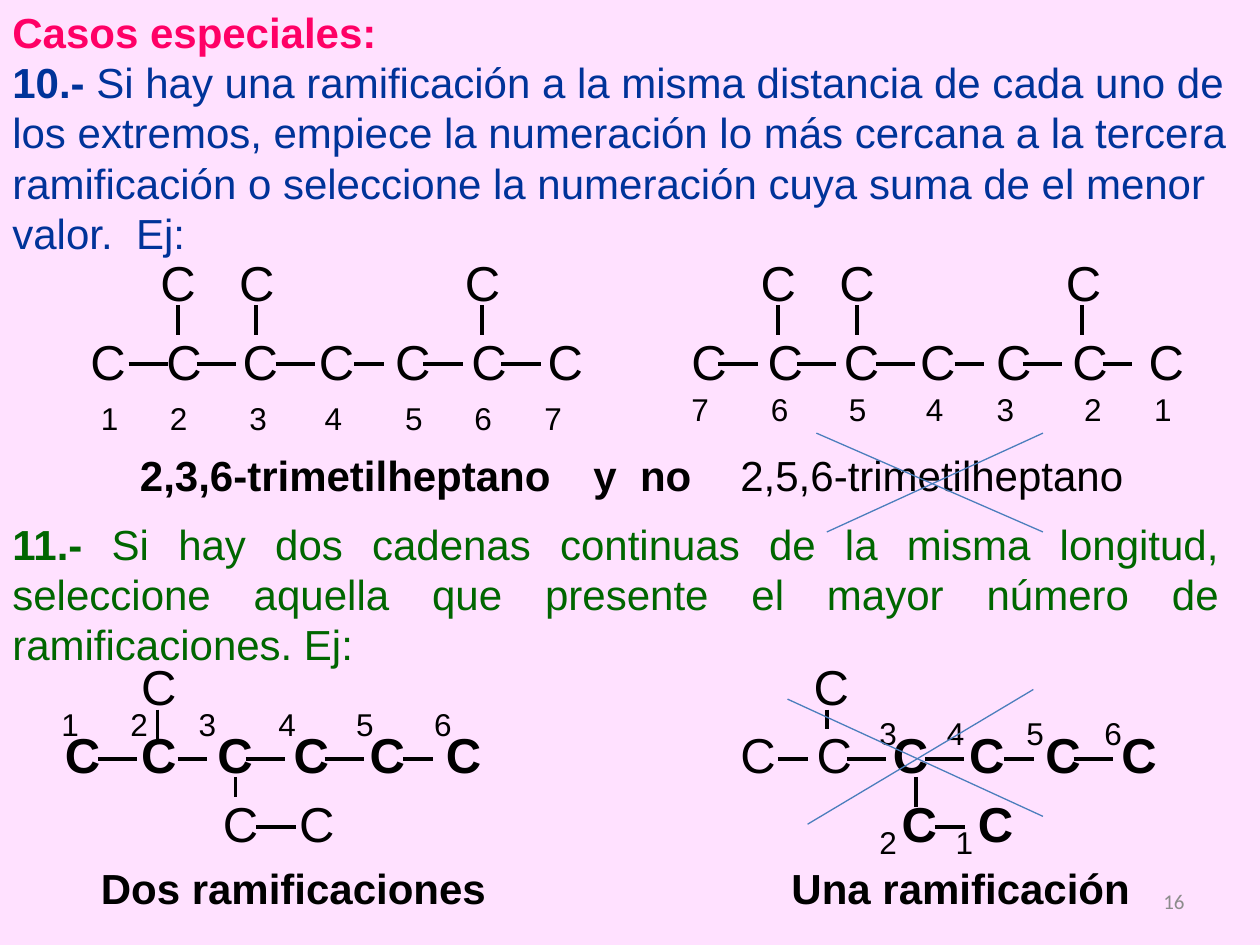
from lxml.etree import SubElement
from pptx import Presentation
from pptx.dml.color import RGBColor
from pptx.enum.shapes import MSO_CONNECTOR
from pptx.enum.text import MSO_ANCHOR, PP_ALIGN
from pptx.oxml.ns import qn
from pptx.util import Pt

BLACK = RGBColor(0, 0, 0)
PINK = RGBColor(0xFF, 0x00, 0x66)
NAVY = RGBColor(0x00, 0x33, 0x99)
GREEN = RGBColor(0x00, 0x66, 0x00)
BLUE = RGBColor(0x4B, 0x7E, 0xBC)
GRAY = RGBColor(0x8C, 0x8C, 0x8C)
BACKGROUND = RGBColor(0xFF, 0xE1, 0xFF)

TITLE = [("Casos especiales:", PINK, True)]
RULE_10 = [
    ("10.- ", NAVY, True),
    ("Si hay una ramificación a la misma distancia de cada uno de los extremos, "
     "empiece la numeración lo más cercana a la tercera ramificación o seleccione "
     "la numeración cuya suma de el menor valor.  Ej:", NAVY, False),
]
RULE_11 = [
    ("11.- ", GREEN, True),
    ("Si hay dos cadenas continuas de la misma longitud, seleccione aquella que "
     "presente el mayor número de ramificaciones. Ej:", GREEN, False),
]

# left, top, plain atoms, bold atoms
CHAINS = [
    (44.5, 186, 7, 0), (388, 186, 7, 0),
    (30, 410.5, 0, 6), (416, 410.5, 2, 4),
    (120.3, 450, 2, 0), (508.2, 450, 0, 2),
]
BRANCHES = [
    (140.5, (84.5, 129.5, 258.5, 427.5, 472.5, 602)),
    (371.5, (73.5, 457.8)),
]
NUMBERS = [
    (224.5, "1234567", (50.5, 90, 135.5, 178.5, 224.5, 264, 304)),
    (219.5, "7654321", (388, 433.5, 478, 522, 562.5, 612.5, 652.5)),
    (399.5, "123456", (28, 67.5, 106.5, 152, 196.5, 241)),
    (404.5, "3456", (495.5, 534, 579.5, 624)),
    (466.5, "21", (495.5, 539)),
]
LONG, SHORT = 22.5, 17
BONDS = [
    (208, LONG, (73.5, 112.5, 157.5, 242, 286.5, 410.5, 455.5, 500.5, 584.5)),
    (208, SHORT, (202.5, 545.5, 630)),
    (433.5, LONG, (56, 140.5, 185.5, 484, 528.5, 613.5)),
    (433.5, SHORT, (101.5, 230.5, 444.5, 574)),
    (472.5, LONG, (146.5,)),
    (472.5, SHORT, (534.5,)),
]
UPRIGHTS = [
    (174.5, SHORT, (101.5, 146.5, 275.5, 444.5, 489.5, 618.5)),
    (405.5, SHORT, (90,)), (405.5, 11, (472.5,)),
    (444, 11.5, (134.6,)), (444, SHORT, (523.5,)),
]
CROSSES = [
    (466.5, 247.5, 596, 304), (596, 247.5, 472.5, 304),
    (461.5, 471, 590.5, 394), (450, 399.5, 596, 466.5),
]
# text, left, top, width, bold
LABELS = [
    ("2,3,6-trimetilheptano", 72.9, 253.5, 254, True),
    ("y  no", 332, 253.5, 74, True),
    ("2,5,6-trimetilheptano", 416, 253.5, 270, False),
    ("Dos ramificaciones", 50.5, 489.5, 242, True),
    ("Una ramificación", 445.2, 489.5, 230, True),
]
ATOM_PITCH = 43.55


def add_text(s, x, y, w, h, paragraphs, size, font="Arial", align=None):
    tf = s.shapes.add_textbox(Pt(x), Pt(y), Pt(w), Pt(h)).text_frame
    tf.word_wrap = True
    for i, runs in enumerate(paragraphs):
        p = tf.add_paragraph() if i else tf.paragraphs[0]
        p.alignment = align
        for text, color, bold in runs:
            r = p.add_run()
            r.text = text
            r.font.name = font
            r.font.size = Pt(size)
            r.font.bold = bold
            r.font.color.rgb = color
    return tf


def add_chain(s, x, y, plain, bold):
    count = plain + bold
    runs = []
    if plain:
        runs.append(("\t".join("C" * plain) + ("\t" if bold else ""), BLACK, False))
    if bold:
        runs.append(("\t".join("C" * bold), BLACK, True))
    tf = add_text(s, x, y, count * ATOM_PITCH + 10, 41, [runs], 28)
    tabs = SubElement(tf.paragraphs[0]._p.get_or_add_pPr(), qn("a:tabLst"))
    for i in range(1, count):
        SubElement(tabs, qn("a:tab"), pos=str(Pt(i * ATOM_PITCH)), algn="l")


def add_line(s, x1, y1, x2, y2, color=BLACK, width=2.25):
    c = s.shapes.add_connector(MSO_CONNECTOR.STRAIGHT, Pt(x1), Pt(y1), Pt(x2), Pt(y2))
    c.line.color.rgb = color
    c.line.width = Pt(width)
    SubElement(c._element.spPr, qn("a:effectLst"))


def main():
    prs = Presentation()
    prs.slide_width, prs.slide_height = Pt(720), Pt(540)
    s = prs.slides.add_slide(prs.slide_layouts[6])
    s.background.fill.solid()
    s.background.fill.fore_color.rgb = BACKGROUND

    add_text(s, 0, 0, 720, 211, [TITLE, RULE_10], 24)
    add_text(s, 0, 292.5, 703.5, 94.5, [RULE_11], 24, align=PP_ALIGN.JUSTIFY)
    for chain in CHAINS:
        add_chain(s, *chain)
    for y, xs in BRANCHES:
        for x in xs:
            add_text(s, x, y, 38, 41, [[("C", BLACK, False)]], 28)
    for y, digits, xs in NUMBERS:
        for digit, x in zip(digits, xs):
            add_text(s, x, y, 28, 29, [[(digit, BLACK, False)]], 18)
    for text, x, y, w, bold in LABELS:
        add_text(s, x, y, w, 36.5, [[(text, BLACK, bold)]], 24)
    for y, length, xs in BONDS:
        for x in xs:
            add_line(s, x, y, x + length, y)
    for y, length, xs in UPRIGHTS:
        for x in xs:
            add_line(s, x, y, x, y + length)
    for ends in CROSSES:
        add_line(s, *ends, color=BLUE, width=0.75)
    tf = add_text(s, 516, 500.5, 168, 29, [[("16", GRAY, False)]], 12, "Calibri", PP_ALIGN.RIGHT)
    tf.vertical_anchor = MSO_ANCHOR.MIDDLE
    prs.save("out.pptx")


if __name__ == "__main__":
    main()
